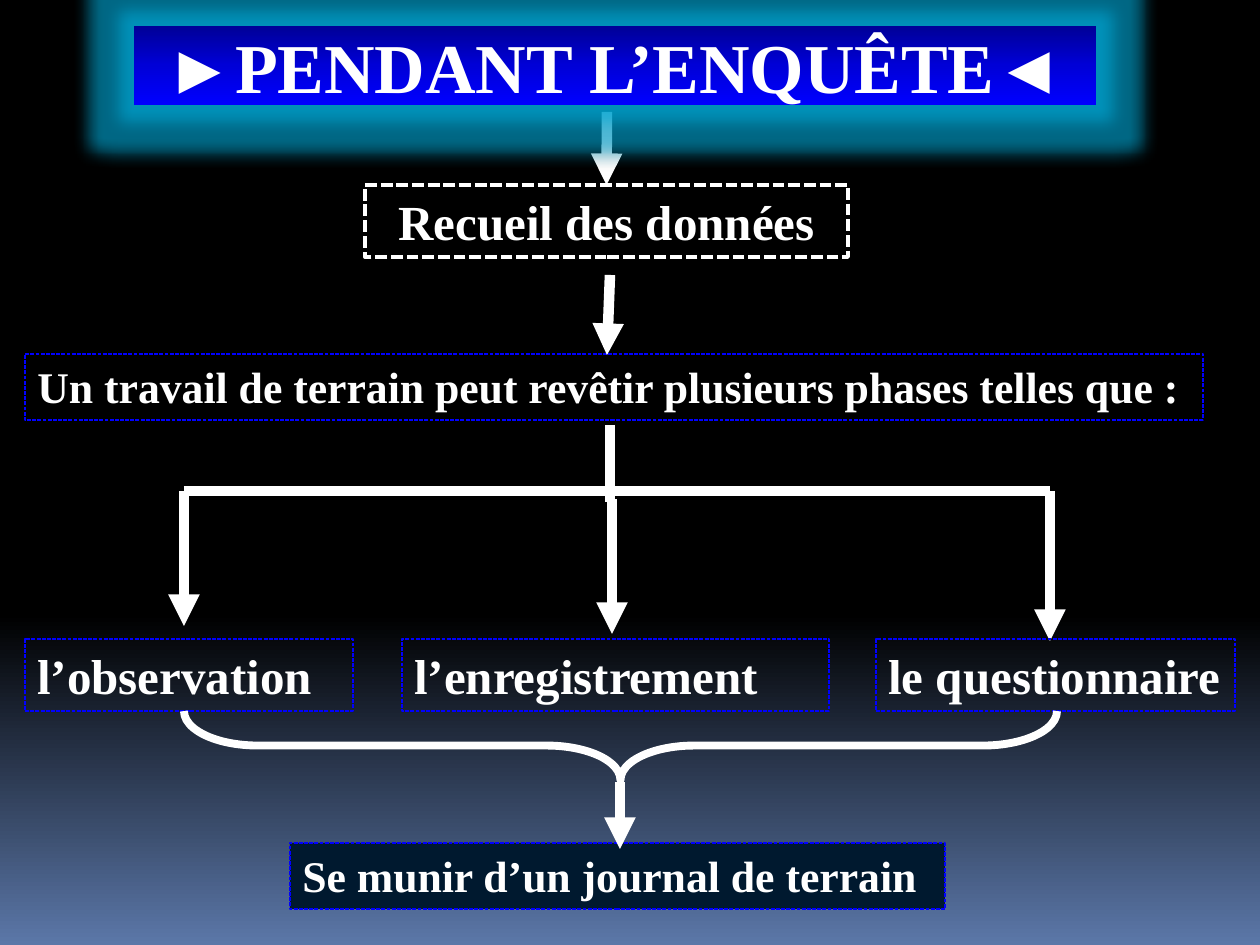
"""Build the slide on the phases of a field survey."""
from lxml.etree import SubElement
from pptx import Presentation
from pptx.dml.color import RGBColor
from pptx.enum.dml import MSO_LINE as Dash
from pptx.enum.shapes import MSO_CONNECTOR as Connector, MSO_SHAPE as Shape
from pptx.enum.text import MSO_ANCHOR as Anchor, MSO_AUTO_SIZE as AutoSize, PP_ALIGN as Align
from pptx.oxml.ns import qn
from pptx.util import Pt

EMU_PER_PX = 914400 / 126
COLORS = {
    "white": "FFFFFF",
    "black": "000000",
    "blue": "0000FF",
    "royal": "0000D7",
    "navy": "000097",
    "night": "00192F",
    "horizon": "5B77A8",
    "glow": "00ADDC",
}
TOP, BOTTOM = 0, 2


def px(*lengths):
    return [round(length * EMU_PER_PX) for length in lengths]


def rgb(name):
    return RGBColor.from_string(COLORS[name])


def set_attributes(target, values):
    for name, value in values.items():
        setattr(target, name, value)


def add_node(parent, tag, **attributes):
    return SubElement(parent, qn(tag), {key: str(value) for key, value in attributes.items()})


def add_color(parent, name, alpha=None):
    color = add_node(parent, "a:srgbClr", val=COLORS[name])
    if alpha is not None:
        add_node(color, "a:alpha", val=alpha * 1000)


def set_gradient(fill, parent, stops):
    fill.gradient()
    fill.gradient_angle = 270
    stop_list = next(parent.iter(qn("a:gsLst")))
    for stop in list(stop_list):
        stop_list.remove(stop)
    for percent, name in stops:
        add_color(add_node(stop_list, "a:gs", pos=percent * 1000), name)


def set_line(line, color, width, dash=None):
    line.color.rgb = rgb(color)
    set_attributes(line, {"width": Pt(width), "dash_style": dash})


def add_label(slide, text, box, size, align=Align.LEFT, anchor=Anchor.TOP,
              fill=None, line=("blue", 0.75, Dash.SQUARE_DOT)):
    shape = slide.shapes.add_shape(Shape.RECTANGLE, *px(*box))
    shape.shadow.inherit = False
    if fill:
        shape.fill.solid()
        shape.fill.fore_color.rgb = rgb(fill)
    else:
        shape.fill.background()
    if line:
        set_line(shape.line, *line)
    else:
        shape.line.fill.background()
    grow = AutoSize.SHAPE_TO_FIT_TEXT if line else AutoSize.NONE
    set_attributes(shape.text_frame, {"word_wrap": True, "auto_size": grow,
                                      "vertical_anchor": anchor})
    paragraph = shape.text_frame.paragraphs[0]
    paragraph.alignment = align
    run = paragraph.add_run()
    run.text = text
    set_attributes(run.font, {"name": "Times New Roman", "size": Pt(size), "bold": True})
    run.font.color.rgb = rgb("white")
    return shape


def add_title(slide, text, box):
    title = add_label(slide, text, box, 40, Align.CENTER, Anchor.MIDDLE, line=None)
    properties = title.element.spPr
    set_gradient(title.fill, properties, [(0, "navy"), (50, "royal"), (100, "blue")])
    effects = properties.find(qn("a:effectLst"))
    add_color(add_node(effects, "a:glow", rad=Pt(18)), "glow", 60)
    shadow = add_node(effects, "a:outerShdw", blurRad=Pt(3.5), dist=Pt(2.2),
                      dir=5400000, rotWithShape=0)
    add_color(shadow, "black", 32)


def add_line(slide, start, end, arrow=True):
    connector = slide.shapes.add_connector(Connector.STRAIGHT, *px(*start, *end))
    set_line(connector.line, "white", 6)
    if arrow:
        add_node(connector.line._get_or_add_ln(), "a:tailEnd", type="triangle")
    add_node(connector.element.spPr, "a:effectLst")
    return connector


def add_brace(slide, box):
    brace = slide.shapes.add_shape(Shape.LEFT_BRACE, *px(*box))
    brace.rotation = 270
    brace.adjustments[0] = 1.07
    brace.adjustments[1] = 0.5
    brace.shadow.inherit = False
    brace.fill.background()
    set_line(brace.line, "white", 4.5)


def main():
    presentation = Presentation()
    width, height = px(1260, 945)
    set_attributes(presentation, {"slide_width": width, "slide_height": height})
    slide = presentation.slides.add_slide(presentation.slide_layouts[6])
    set_gradient(slide.background.fill, slide.element,
                 [(0, "black"), (65, "black"), (100, "horizon")])

    add_label(slide, "Un travail de terrain peut revêtir plusieurs phases telles que :",
              (25, 354, 1178, 66), 25, Align.JUSTIFY)
    add_line(slide, (610, 275), (607, 355))

    left, middle, right, branch = 184, 610, 1050, 491
    add_line(slide, (left, branch), (right, branch), arrow=False)
    add_line(slide, (middle, 425), (middle, 502), arrow=False)
    for x, start, end in [(left, branch, 626), (612, 499, 634), (right, branch, 641)]:
        add_line(slide, (x, start), (x, end))

    phases = [("l’observation", 25, 328), ("l’enregistrement", 402, 427),
              ("le questionnaire", 876, 359)]
    for text, x, box_width in phases:
        add_label(slide, text, (x, 639, box_width, 72), 28)

    collection_arrow = add_line(slide, (607, 112), (607, 185))
    add_label(slide, "Se munir d’un journal de terrain", (290, 843, 655, 66), 25,
              Align.JUSTIFY, fill="night")
    add_line(slide, (620, 782), (620, 849))
    add_brace(slide, (586, 309, 69, 873))
    add_title(slide, "►PENDANT L’ENQUÊTE◄", (134, 26, 962, 79))
    collection = add_label(slide, "Recueil des données", (365, 185, 483, 72), 28,
                           Align.CENTER, line=("white", 2.25, Dash.SQUARE_DOT))
    collection_arrow.end_connect(collection, TOP)
    presentation.save("out.pptx")


if __name__ == "__main__":
    main()
